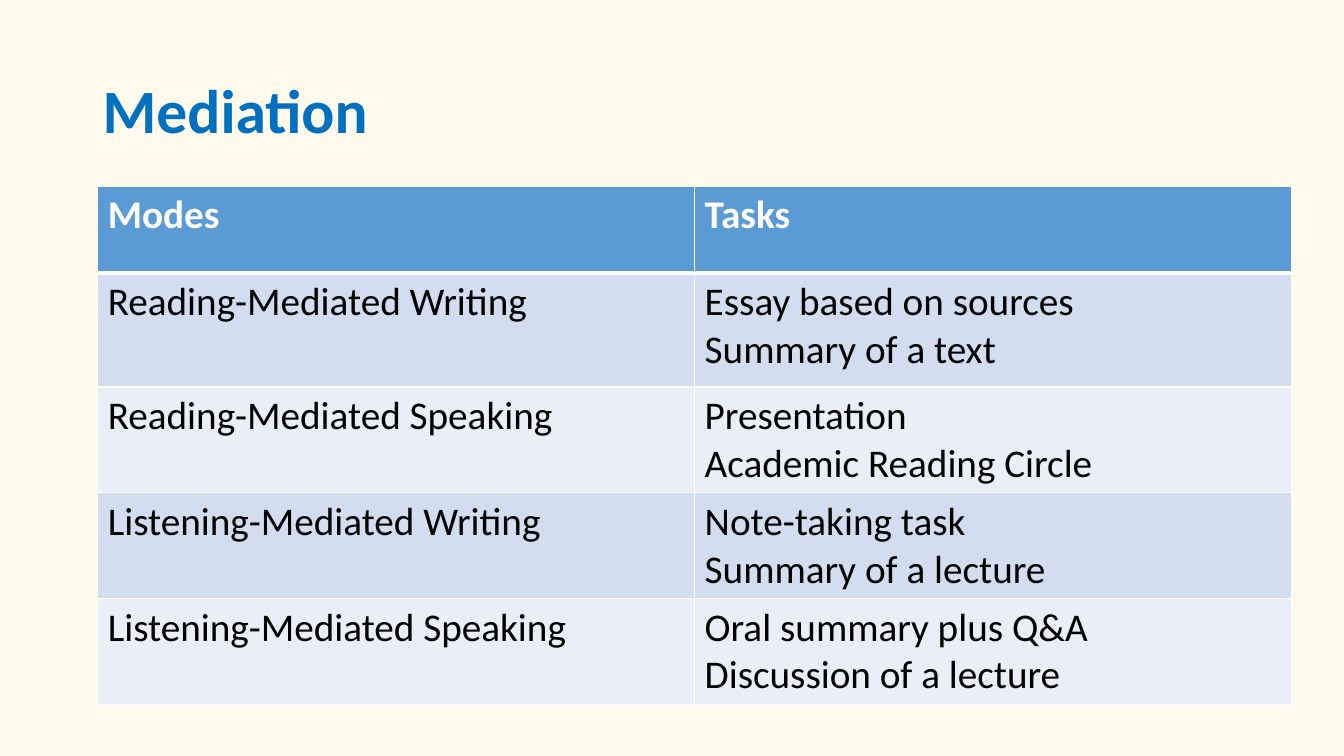
from dataclasses import dataclass

from pptx import Presentation
from pptx.dml.color import RGBColor as Rgb
from pptx.enum.text import MSO_ANCHOR as Anchor
from pptx.oxml import parse_xml
from pptx.oxml.ns import nsdecls
from pptx.util import Inches, Pt


@dataclass(frozen=True)
class Theme:
    font: str = "Calibri"
    back: str = "FFFAEB"
    title: str = "0070C0"
    head: str = "5B9BD5"
    bands: tuple[str, str] = ("D2DEEF", "EAEFF7")
    light: str = "FFFFFF"
    dark: str = "000000"
    big: int = 44
    body: int = 28
    thin: int = 1
    thick: int = 3


@dataclass(frozen=True)
class Row:
    mode: str
    tasks: tuple[str, ...]
    height: float = 1.05


LOOK = Theme()
ROWS = [
    Row("Modes", ("Tasks",), 0.86),
    Row("Reading-Mediated Writing",
        ("Essay based on sources", "Summary of a text"), 1.13),
    Row("Reading-Mediated Speaking",
        ("Presentation", "Academic Reading Circle")),
    Row("Listening-Mediated Writing",
        ("Note-taking task", "Summary of a lecture")),
    Row("Listening-Mediated Speaking",
        ("Oral summary plus Q&A", "Discussion of a lecture")),
]
LEFT, TOP, WIDTH = 0.97, 1.85, 5.92


def write(frame, lines: tuple[str, ...], size: int, color: str, bold: bool) -> None:
    """Fill a text frame with one paragraph per line."""
    style = {"name": LOOK.font, "size": Pt(size), "bold": bold}
    for num, line in enumerate(lines):
        para = frame.add_paragraph() if num else frame.paragraphs[0]
        run = para.add_run()
        run.text = line
        for key, value in style.items():
            setattr(run.font, key, value)
        run.font.color.rgb = Rgb.from_string(color)


def edge(cell, side: str, width: int) -> None:
    """Add one cell border; call in the order L, R, T, B."""
    cell._tc.get_or_add_tcPr().append(parse_xml(
        f'<a:ln{side} {nsdecls("a")} w="{Pt(width)}"><a:solidFill>'
        f'<a:srgbClr val="{LOOK.light}"/></a:solidFill></a:ln{side}>'))


def add_title(slide, text: str) -> None:
    box = slide.shapes.add_textbox(
        Inches(0.92), Inches(0.4), Inches(11.5), Inches(1.45))
    frame = box.text_frame
    for key, value in {"word_wrap": True, "vertical_anchor": Anchor.MIDDLE}.items():
        setattr(frame, key, value)
    write(frame, (text,), LOOK.big, LOOK.title, True)
    frame.paragraphs[0].line_spacing = 0.9


def add_grid(slide, rows: list[Row]) -> None:
    high = sum(row.height for row in rows)
    grid = slide.shapes.add_table(
        len(rows), 2, Inches(LEFT), Inches(TOP),
        Inches(2 * WIDTH), Inches(high)).table
    for col in grid.columns:
        col.width = Inches(WIDTH)
    for num, row in enumerate(rows):
        grid.rows[num].height = Inches(row.height)
        head = num == 0
        fill = LOOK.head if head else LOOK.bands[(num - 1) % 2]
        ink = LOOK.light if head else LOOK.dark
        # The rule under the header is heavier than the others
        sides = {"L": LOOK.thin, "R": LOOK.thin,
                 "T": LOOK.thick if num == 1 else LOOK.thin,
                 "B": LOOK.thick if head else LOOK.thin}
        for pos, lines in enumerate(((row.mode,), row.tasks)):
            cell = grid.cell(num, pos)
            for side, width in sides.items():
                edge(cell, side, width)
            cell.fill.solid()
            cell.fill.fore_color.rgb = Rgb.from_string(fill)
            write(cell.text_frame, lines, LOOK.body, ink, head)


def main() -> None:
    deck = Presentation()
    deck.slide_width, deck.slide_height = Inches(13.33), Inches(7.5)
    slide = deck.slides.add_slide(deck.slide_layouts[6])

    # Background
    back = slide.background.fill
    back.solid()
    back.fore_color.rgb = Rgb.from_string(LOOK.back)

    # Heading and table
    add_title(slide, "Mediation")
    add_grid(slide, ROWS)
    deck.save("out.pptx")


if __name__ == "__main__":
    main()
